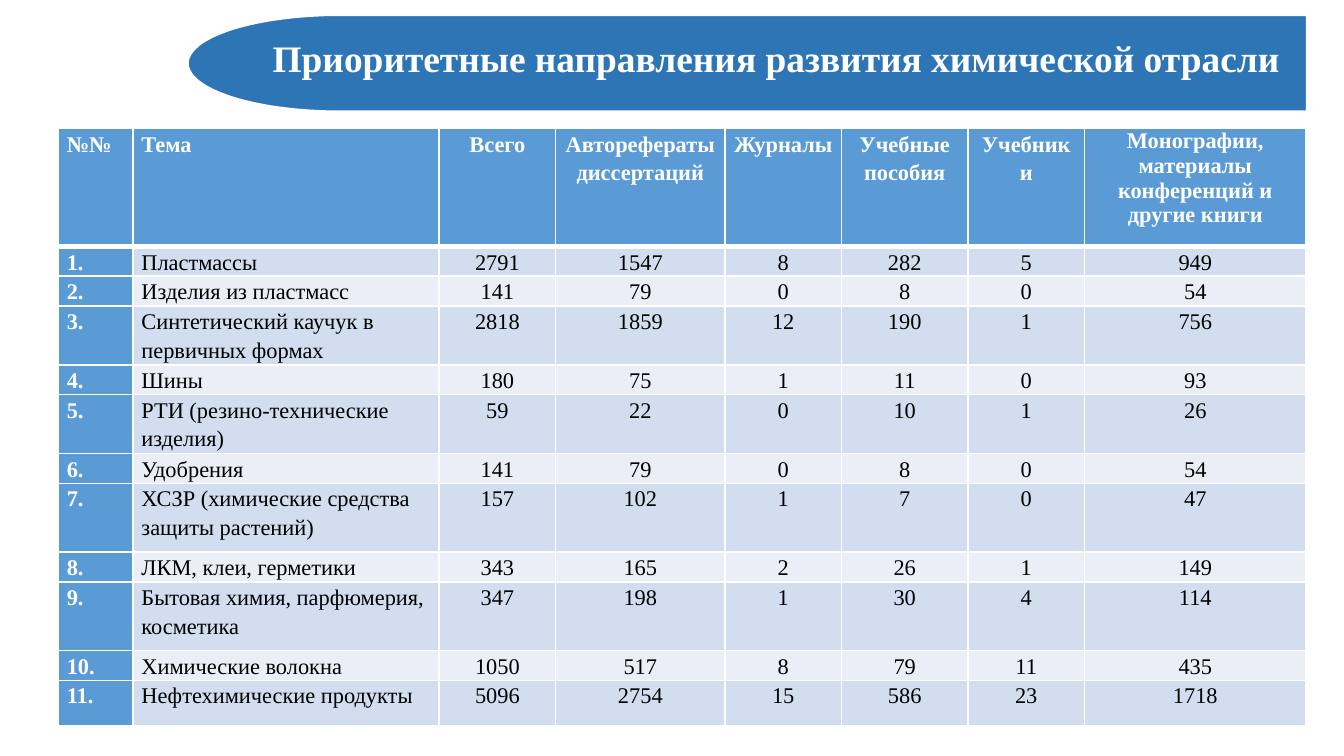
import math

from pptx import Presentation
from pptx.dml.color import RGBColor
from pptx.enum.text import PP_ALIGN
from pptx.oxml import parse_xml
from pptx.oxml.ns import nsdecls
from pptx.util import Pt

LEFT, CENTER = PP_ALIGN.LEFT, PP_ALIGN.CENTER
FONT = "Times New Roman"
COLORS = {
    "white": "FFFFFF",
    "black": "000000",
    "banner": "2E75B6",
    "header": "5B9BD5",
    "odd": "D2DEEF",
    "even": "EAEFF7",
}


def write(paragraph, text, size, color, bold):
    paragraph.text = text
    font_format = {"name": FONT, "size": Pt(size), "bold": bold}
    for attribute, value in font_format.items():
        setattr(paragraph.font, attribute, value)
    paragraph.font.color.rgb = RGBColor.from_string(COLORS[color])


def add_borders(cell, bottom_width):
    """Must run before the cell is filled, as borders come first in the XML."""
    widths = {"lnL": 1, "lnR": 1, "lnT": 1, "lnB": bottom_width}
    for tag, width in widths.items():
        cell._tc.get_or_add_tcPr().append(parse_xml(
            f'<a:{tag} {nsdecls("a")} w="{Pt(width)}"><a:solidFill>'
            f'<a:srgbClr val="{COLORS["white"]}"/></a:solidFill></a:{tag}>'
        ))


presentation = Presentation()
presentation.slide_width = Pt(720)
presentation.slide_height = Pt(405)
slide = presentation.slides.add_slide(presentation.slide_layouts[6])

# Table of publications by topic
HEADERS = ["№№", "Тема", "Всего", "Авторефераты диссертаций", "Журналы",
           "Учебные пособия", "Учебники",
           "Монографии, материалы конференций и другие книги"]
TOPICS = [
    ("Пластмассы", 2791, 1547, 8, 282, 5, 949),
    ("Изделия из пластмасс", 141, 79, 0, 8, 0, 54),
    ("Синтетический каучук в первичных формах", 2818, 1859, 12, 190, 1, 756),
    ("Шины", 180, 75, 1, 11, 0, 93),
    ("РТИ (резино-технические изделия)", 59, 22, 0, 10, 1, 26),
    ("Удобрения", 141, 79, 0, 8, 0, 54),
    ("ХСЗР (химические средства защиты растений)", 157, 102, 1, 7, 0, 47),
    ("ЛКМ, клеи, герметики", 343, 165, 2, 26, 1, 149),
    ("Бытовая химия, парфюмерия, косметика", 347, 198, 1, 30, 4, 114),
    ("Химические волокна", 1050, 517, 8, 79, 11, 435),
    ("Нефтехимические продукты", 5096, 2754, 15, 586, 23, 1718),
]
COLUMN_WIDTHS = [40, 164, 62.4, 90.8, 62.3, 67.9, 62.3, 118.9]
ONE_LINE, TWO_LINES, TALL = 16, 31.5, 36.8
ROW_HEIGHTS = [63.2, ONE_LINE, ONE_LINE, TWO_LINES, ONE_LINE, TWO_LINES,
               ONE_LINE, TALL, ONE_LINE, TALL, ONE_LINE, 24.2]
rows = [HEADERS] + [(f"{number}.", *topic)
                    for number, topic in enumerate(TOPICS, start=1)]

table = slide.shapes.add_table(
    len(rows), len(HEADERS), Pt(31.3), Pt(68.8),
    Pt(sum(COLUMN_WIDTHS)), Pt(sum(ROW_HEIGHTS))).table
for column, width in zip(table.columns, COLUMN_WIDTHS):
    column.width = Pt(width)
for row, height in zip(table.rows, ROW_HEIGHTS):
    row.height = Pt(height)

cell_format = {"margin_left": Pt(4.5), "margin_right": Pt(4.5),
               "margin_top": 0, "margin_bottom": 0}
for row_index, values in enumerate(rows):
    for column_index, value in enumerate(values):
        cell = table.cell(row_index, column_index)
        is_header = row_index == 0
        is_heading = is_header or column_index == 0
        band = "odd" if row_index % 2 else "even"
        for attribute, setting in cell_format.items():
            setattr(cell, attribute, setting)
        add_borders(cell, 3 if is_header else 1)
        cell.fill.solid()
        cell.fill.fore_color.rgb = RGBColor.from_string(
            COLORS["header" if is_heading else band])
        paragraph = cell.text_frame.paragraphs[0]
        write(paragraph, str(value), 12,
              "white" if is_heading else "black", is_heading)
        paragraph.alignment = LEFT if column_index < 2 else CENTER
        is_long_header = is_header and column_index == len(HEADERS) - 1
        paragraph.line_spacing = 1.0 if is_long_header else 1.15

# Banner: a bar whose left end is half an ellipse
BANNER_RIGHT, BANNER_TOP, BANNER_BOTTOM = 700, 8.2, 59.6
ARC_CENTER, ARC_WIDTH = 182, 81.2
middle = (BANNER_TOP + BANNER_BOTTOM) / 2
half_height = (BANNER_BOTTOM - BANNER_TOP) / 2
arc = []
for degrees in range(90, 271, 3):
    angle = math.radians(degrees)
    arc.append((Pt(ARC_CENTER + ARC_WIDTH * math.cos(angle)),
                Pt(middle + half_height * math.sin(angle))))
builder = slide.shapes.build_freeform(Pt(BANNER_RIGHT), Pt(BANNER_TOP))
builder.add_line_segments([(Pt(BANNER_RIGHT), Pt(BANNER_BOTTOM)), *arc])
banner = builder.convert_to_shape()
banner.shadow.inherit = False
banner.fill.solid()
banner.fill.fore_color.rgb = RGBColor.from_string(COLORS["banner"])
banner.line.color.rgb = RGBColor.from_string(COLORS["white"])
banner.line.width = Pt(0.78)

title = slide.shapes.add_textbox(Pt(139), Pt(15.1), Pt(581), Pt(31.5))
title.text_frame.word_wrap = True
write(title.text_frame.paragraphs[0],
      "Приоритетные направления развития химической отрасли",
      20, "white", True)

presentation.save("out.pptx")
